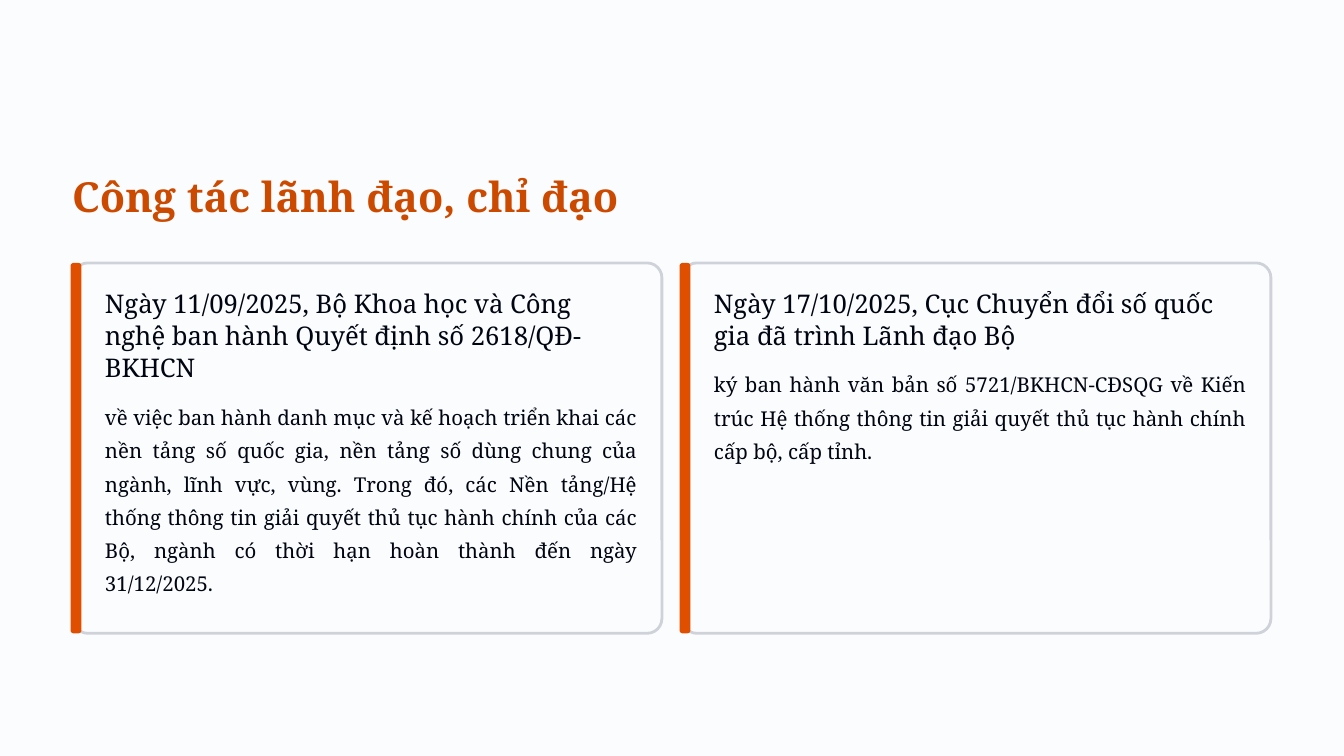
from pptx import Presentation
from pptx.dml.color import RGBColor
from pptx.enum.shapes import MSO_SHAPE
from pptx.enum.text import MSO_ANCHOR, PP_ALIGN
from pptx.util import Inches, Pt

TITLE = "Công tác lãnh đạo, chỉ đạo"
CARDS = [
    ("Ngày 11/09/2025, Bộ Khoa học và Công nghệ ban hành Quyết định số 2618/QĐ-BKHCN",
     1.33, 4.72,
     "về việc ban hành danh mục và kế hoạch triển khai các nền tảng số quốc gia, "
     "nền tảng số dùng chung của ngành, lĩnh vực, vùng. Trong đó, các Nền tảng/Hệ "
     "thống thông tin giải quyết thủ tục hành chính của các Bộ, ngành có thời hạn "
     "hoàn thành đến ngày 31/12/2025.", 2.27),
    ("Ngày 17/10/2025, Cục Chuyển đổi số quốc gia đã trình Lãnh đạo Bộ",
     0.89, 4.33,
     "ký ban hành văn bản số 5721/BKHCN-CĐSQG về Kiến trúc Hệ thống thông tin "
     "giải quyết thủ tục hành chính cấp bộ, cấp tỉnh.", 1.36),
]
COLORS = {"back": "FBFCFE", "title": "CC4900", "bar": "E04F00",
          "edge": "CFD2D8", "ink": "010511"}
FONT = "Noto Serif"
LEFT, TOP, WIDTH, HEIGHT = 0.87, 3.13, 7.01, 4.41
STEP = 7.25


def color(name):
    return RGBColor.from_string(COLORS[name])


def write(box, text, size, line, ink, align=PP_ALIGN.LEFT, bold=False):
    frame = box.text_frame
    frame.margin_left = frame.margin_right = 0
    frame.margin_top = frame.margin_bottom = 0
    frame.vertical_anchor = MSO_ANCHOR.TOP
    frame.word_wrap = True
    para = frame.paragraphs[0]
    para.text = text
    para.alignment = align
    para.line_spacing = Pt(line)
    font = para.font
    font.name, font.size, font.bold = FONT, Pt(size), bold
    font.color.rgb = color(ink)


def panel(x, width, bend, fill, edge=None):
    shape = slide.shapes.add_shape(MSO_SHAPE.ROUNDED_RECTANGLE, Inches(x),
                                   Inches(TOP), Inches(width), Inches(HEIGHT))
    shape.adjustments[0] = bend
    shape.shadow.inherit = False
    shape.fill.solid()
    shape.fill.fore_color.rgb = color(fill)
    if edge:
        shape.line.color.rgb = color(edge)
        shape.line.width = Pt(2.4)
    else:
        shape.line.fill.background()


def text_box(x, y, width, height):
    return slide.shapes.add_textbox(Inches(x), Inches(y), Inches(width), Inches(height))


deck = Presentation()
deck.slide_width, deck.slide_height = Inches(16), Inches(9)
slide = deck.slides.add_slide(deck.slide_layouts[5])
slide.background.fill.solid()
slide.background.fill.fore_color.rgb = color("back")

title = slide.shapes.title
title.left, title.top = Inches(0.86), Inches(2.01)
title.width, title.height = Inches(WIDTH), Inches(0.62)
write(title, TITLE, 35.5, 44.5, "title", bold=True)

for i, (head, head_tall, body_top, body, body_tall) in enumerate(CARDS):
    x = LEFT + i * STEP
    panel(x, WIDTH, 0.04, "back", "edge")
    panel(x - 0.03, 0.13, 0.28, "bar")
    write(text_box(x + 0.38, 3.41, 6.3, head_tall), head, 22, 27.5, "ink")
    write(text_box(x + 0.38, body_top, 6.34, body_tall), body, 17.5, 28.5, "ink",
          PP_ALIGN.JUSTIFY)

deck.save("out.pptx")
